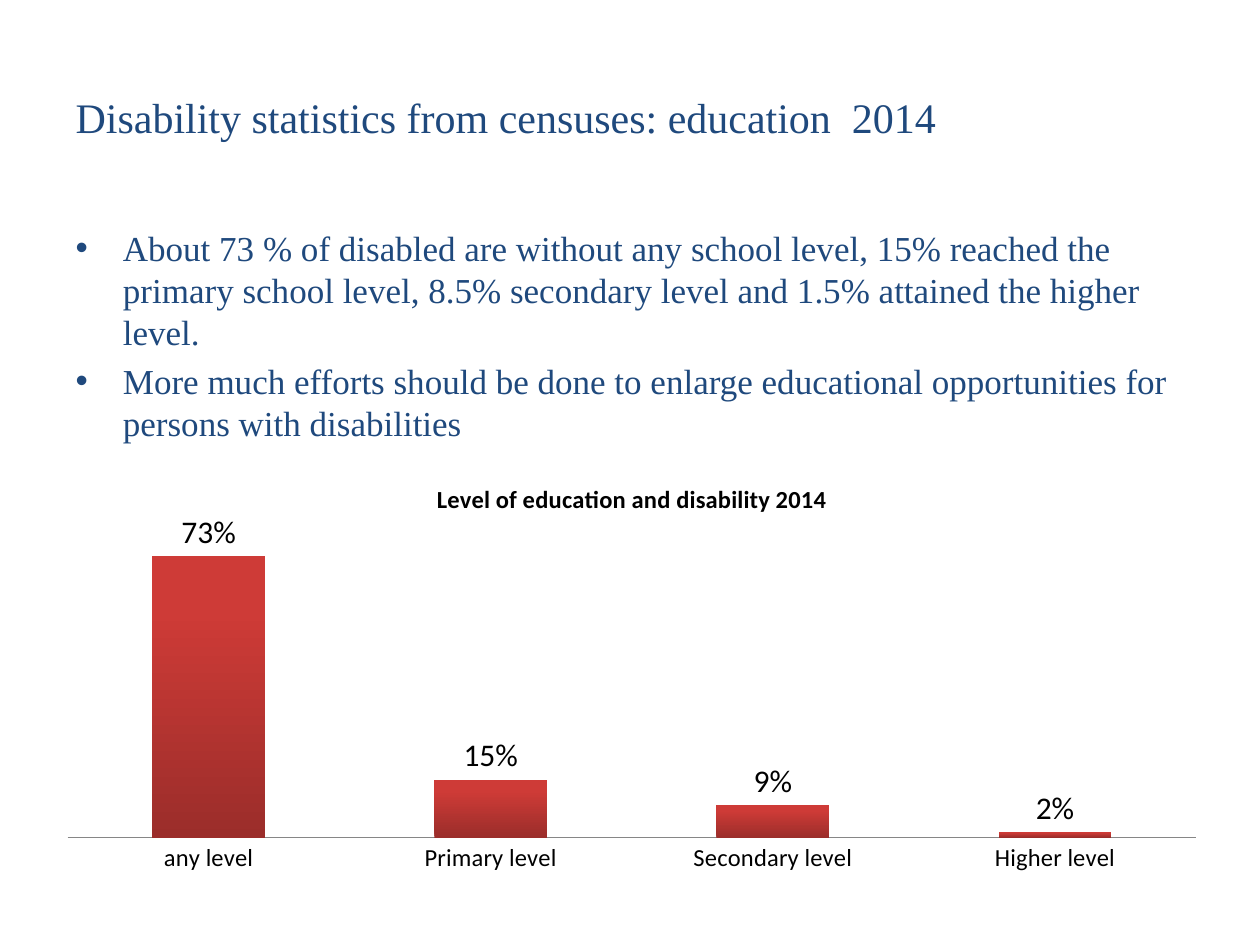
from pptx import Presentation
from pptx.chart.data import CategoryChartData
from pptx.dml.color import RGBColor
from pptx.enum.chart import XL_CHART_TYPE, XL_LABEL_POSITION, XL_TICK_MARK
from pptx.enum.text import MSO_ANCHOR, MSO_AUTO_SIZE, PP_ALIGN
from pptx.oxml import parse_xml
from pptx.oxml.ns import nsdecls
from pptx.util import Inches, Pt

NAVY = RGBColor(0x1F, 0x49, 0x7D)
BLACK = RGBColor(0, 0, 0)
AXIS_GRAY = RGBColor(0x86, 0x86, 0x86)
DARK_RED = RGBColor(0x9B, 0x2D, 0x2A)
BRIGHT_RED = RGBColor(0xCE, 0x3B, 0x37)
COLUMNS = XL_CHART_TYPE.COLUMN_CLUSTERED
LABELS_ABOVE = XL_LABEL_POSITION.OUTSIDE_END
NO_TICKS = XL_TICK_MARK.NONE
LEFT = PP_ALIGN.LEFT
MIDDLE = MSO_ANCHOR.MIDDLE
NO_AUTOFIT = MSO_AUTO_SIZE.NONE


def place(holder, left, top, width, height):
    holder.left, holder.top = Inches(left), Inches(top)
    holder.width, holder.height = Inches(width), Inches(height)
    holder.text_frame.word_wrap = True
    holder.text_frame.auto_size = NO_AUTOFIT


def add_text(paragraph, text, size):
    paragraph.alignment = LEFT
    run = paragraph.add_run()
    run.text = text
    run.font.name = "Times New Roman"
    run.font.size = Pt(size)
    run.font.color.rgb = NAVY


prs = Presentation()
prs.slide_width, prs.slide_height = Inches(10), Inches(7.5)
slide = prs.slides.add_slide(prs.slide_layouts[1])

# Title
heading = slide.shapes.title
place(heading, 0.5, 0.3, 9, 1.25)
heading.text_frame.vertical_anchor = MIDDLE
add_text(heading.text_frame.paragraphs[0],
         "Disability statistics from censuses: education  2014", 24)

# Findings, with the bullets of the template
findings = slide.placeholders[1]
place(findings, 0.5, 1.75, 9, 4.95)
statements = [
    "About 73 % of disabled are without any school level, 15% reached the "
    "primary school level, 8.5% secondary level and 1.5% attained the higher level.",
    "More much efforts should be done to enlarge educational opportunities "
    "for persons with disabilities",
]
for i, statement in enumerate(statements):
    frame = findings.text_frame
    add_text(frame.add_paragraph() if i else frame.paragraphs[0], statement, 20)

# Education chart
education = CategoryChartData(number_format="0%")
education.categories = ["any level", "Primary level", "Secondary level", "Higher level"]
education.add_series("Series 1", [0.73, 0.15, 0.085, 0.015])
chart = slide.shapes.add_chart(COLUMNS, Inches(0.35), Inches(3.67),
                               Inches(9.33), Inches(3.31), education).chart
chart.has_legend = False
chart.font.name = "Calibri"
chart.font.size = Pt(18)
chart.font.color.rgb = BLACK

# Chart title
chart.has_title = True
caption = chart.chart_title.text_frame.paragraphs[0].add_run()
caption.text = "Level of education and disability 2014"
caption.font.name = "Calibri"
caption.font.size = Pt(14)
caption.font.bold = True
caption.font.color.rgb = BLACK

# Axes
levels = chart.category_axis
levels.major_tick_mark = NO_TICKS
levels.tick_labels.font.size = Pt(14)
levels.format.line.color.rgb = AXIS_GRAY
shares = chart.value_axis
shares.visible = False
shares.has_major_gridlines = False
shares.minimum_scale, shares.maximum_scale = 0, 0.8

# Columns, shaded from dark at the foot to bright at the top
plot = chart.plots[0]
plot.gap_width = 150
plot.vary_by_categories = False
fill = plot.series[0].format.fill
fill.gradient()
fill.gradient_angle = 90
foot, top = fill.gradient_stops
foot.color.rgb, foot.position = DARK_RED, 0
top.color.rgb, top.position = BRIGHT_RED, 0.8

# Value labels
plot.has_data_labels = True
labels = plot.data_labels
labels.show_value = True
labels.number_format = "0%"
labels.number_format_is_linked = False
labels.position = LABELS_ABOVE
labels.font.size = Pt(18)

# Plot area as fractions of the chart
plot_area = chart.element.chart.plotArea
for old_layout in plot_area.xpath("c:layout"):
    plot_area.remove(old_layout)
fractions = "".join(f'<c:{side} val="{value}"/>' for side, value in
                    [("x", 0.02), ("y", 0.16), ("w", 0.96), ("h", 0.74)])
plot_area.insert(0, parse_xml(
    f'<c:layout {nsdecls("c")}><c:manualLayout><c:layoutTarget val="inner"/>'
    f'<c:xMode val="edge"/><c:yMode val="edge"/>{fractions}'
    '</c:manualLayout></c:layout>'))

prs.save("out.pptx")
